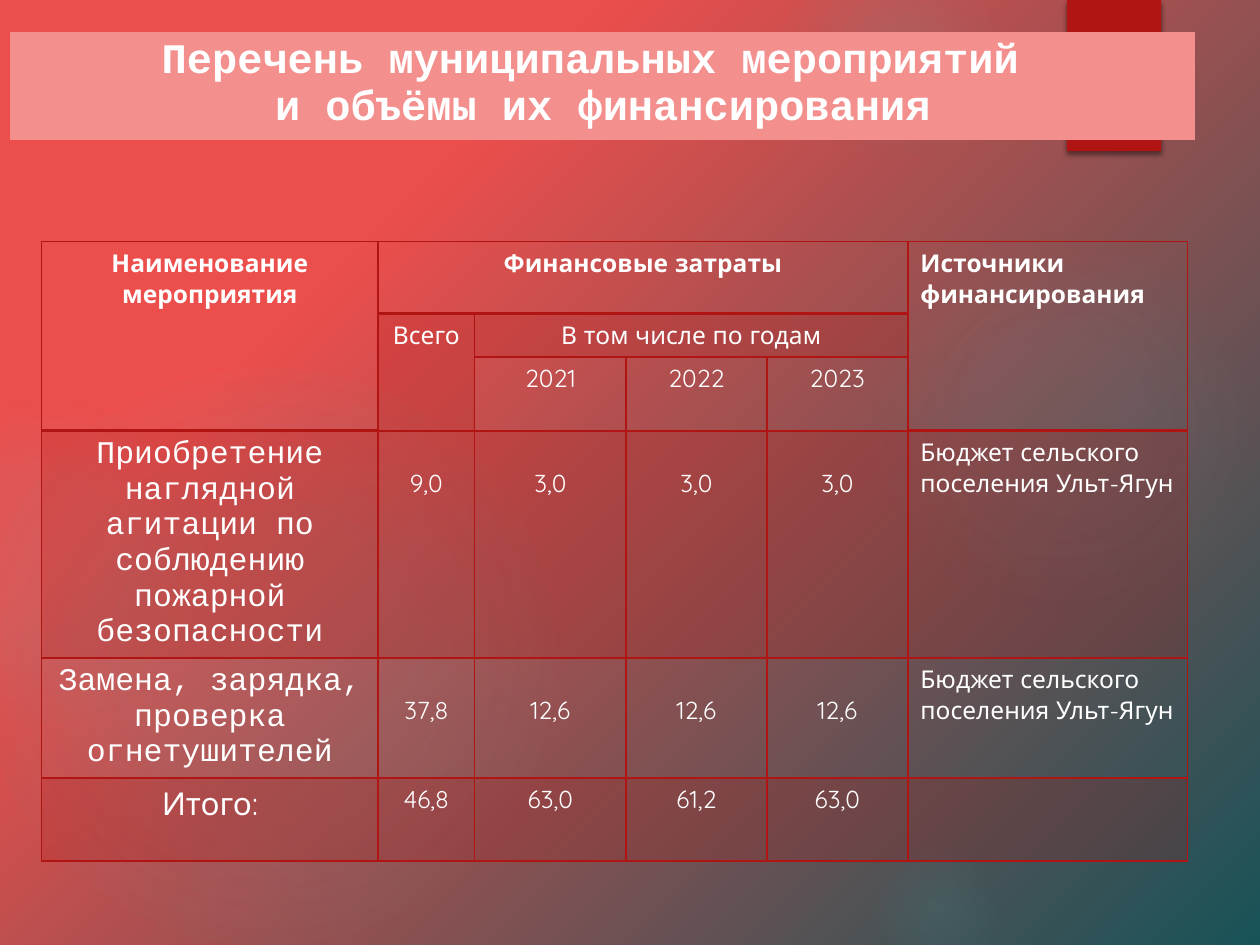
from lxml import etree
from pptx import Presentation
from pptx.dml.color import RGBColor
from pptx.enum.shapes import MSO_SHAPE
from pptx.enum.text import PP_ALIGN
from pptx.oxml import parse_xml
from pptx.oxml.ns import nsdecls, qn
from pptx.util import Cm, Pt

COLORS = {
    "bg_start": "EC4E4C",
    "bg_end": "185358",
    "glow": "50B9C1",
    "accent": "B01513",
    "title_band": "F38F8D",
    "text": "FFFFFF",
}
OVAL, RECTANGLE = MSO_SHAPE.OVAL, MSO_SHAPE.RECTANGLE
LEFT, CENTER = PP_ALIGN.LEFT, PP_ALIGN.CENTER
MONO, SANS = "Courier New", "Quicksand"

# Glows: left, top, diameter (cm), then (position, opacity) stops in percent
GLOWS = [
    (17.5, 4.65, 7.82, [(0, 7), (36, 6), (69, 0)]),
    (15.8, -1.27, 4.45, [(0, 14), (36, 7), (73, 0)]),
    (17.5, 16.94, 2.74, [(0, 9), (36, 5), (66, 0)]),
    (-0.43, 7.42, 11.63, [(0, 11), (36, 10), (75, 0)]),
    (-2.34, 8.05, 6.55, [(0, 8), (36, 8), (72, 0)]),
]

# Costs table
COLUMN_WIDTHS = [6.78, 1.95, 3.05, 2.84, 2.84, 5.64]
ROW_HEIGHTS = [1.45, 0.87, 1.49, 4.58, 2.42, 1.67]
SPANS = [((0, 0), (2, 0)), ((0, 1), (0, 4)), ((0, 5), (2, 5)),
         ((1, 1), (2, 1)), ((1, 2), (1, 4))]
HEADINGS = {
    (0, 0): "Наименование мероприятия",
    (0, 1): "Финансовые затраты",
    (0, 5): "Источники финансирования",
    (1, 1): "Всего",
    (1, 2): "В том числе по годам",
    (2, 2): "2021",
    (2, 3): "2022",
    (2, 4): "2023",
}
BUDGET = "Бюджет сельского поселения Ульт-Ягун"
MEASURES = [
    ("Приобретение наглядной агитации по соблюдению пожарной безопасности",
     "9,0", "3,0", "3,0", "3,0", BUDGET),
    ("Замена, зарядка, проверка огнетушителей",
     "37,8", "12,6", "12,6", "12,6", BUDGET),
    ("Итого:", "46,8", "63,0", "61,2", "63,0", ""),
]
FIRST_MEASURE, TOTAL_ROW, SOURCE_COLUMN = 3, 5, 5
TINTED = {(1, 1), (1, 2)} | {(row, col) for row in (3, 5) for col in range(6)}
# Heavy horizontal rules as (row below the rule, column)
HEAVY_RULES = {(1, col) for col in range(6)} | {(3, 0), (3, 5)}


def rgb(name):
    return RGBColor.from_string(COLORS[name])


def set_background(slide):
    fill = slide.background.fill
    fill.gradient()
    fill.gradient_angle = 315
    for stop, position, name in zip(fill.gradient_stops, (0.27, 1), ("bg_start", "bg_end")):
        stop.position = position
        stop.color.rgb = rgb(name)


def add_glow(slide, left, top, diameter, stops):
    glow = slide.shapes.add_shape(OVAL, Cm(left), Cm(top), Cm(diameter), Cm(diameter))
    glow.shadow.inherit = False
    glow.line.fill.background()
    glow.fill.background()
    stop_xml = "".join(
        f'<a:gs pos="{position * 1000}"><a:srgbClr val="{COLORS["glow"]}">'
        f'<a:alpha val="{opacity * 1000}"/></a:srgbClr></a:gs>'
        for position, opacity in stops)
    gradient = parse_xml(
        f'<a:gradFill {nsdecls("a")} rotWithShape="1"><a:gsLst>{stop_xml}</a:gsLst>'
        '<a:path path="circle"><a:fillToRect l="50000" t="50000" r="50000" b="50000"/>'
        '</a:path></a:gradFill>')
    properties = glow.element.spPr
    properties.replace(properties.find(qn("a:noFill")), gradient)


def add_ribbon(slide, left, top, width, height):
    ribbon = slide.shapes.add_shape(RECTANGLE, left, top, width, height)
    ribbon.fill.solid()
    ribbon.fill.fore_color.rgb = rgb("accent")
    ribbon.line.fill.background()
    ribbon.shadow.inherit = False
    effects = ribbon.element.spPr.find(qn("a:effectLst"))
    effects.append(parse_xml(
        f'<a:outerShdw {nsdecls("a")} blurRad="{Pt(3)}" dist="{Pt(2)}" dir="5400000">'
        '<a:srgbClr val="000000"><a:alpha val="45000"/></a:srgbClr></a:outerShdw>'))


def add_plain_table(slide, left, top, widths, heights):
    table = slide.shapes.add_table(
        len(heights), len(widths), left, top, Cm(sum(widths)), Cm(sum(heights))).table
    table.first_row = table.horz_banding = False
    for column, width in zip(table.columns, widths):
        column.width = Cm(width)
    for row, height in zip(table.rows, heights):
        row.height = Cm(height)
    return table


def set_borders(cell, color=None, top=1, bottom=1):
    properties = cell._tc.get_or_add_tcPr()
    paint = f'<a:solidFill><a:srgbClr val="{color}"/></a:solidFill>' if color else "<a:noFill/>"
    sides = (("lnL", 1), ("lnR", 1), ("lnT", top), ("lnB", bottom))
    for index, (side, width) in enumerate(sides):
        properties.insert(index, parse_xml(
            f'<a:{side} {nsdecls("a")} w="{Pt(width)}">{paint}</a:{side}>'))


def fill_cell(cell, name, opacity=None):
    cell.fill.solid()
    cell.fill.fore_color.rgb = rgb(name)
    if opacity is not None:
        color = cell._tc.tcPr.find(".//" + qn("a:srgbClr"))
        etree.SubElement(color, qn("a:alpha")).set("val", str(opacity * 1000))


def write(paragraph, text, size, font, bold=False, align=CENTER):
    paragraph.alignment = align
    run = paragraph.add_run()
    run.text = text
    run.font.size = Pt(size)
    run.font.name = font
    run.font.bold = bold
    run.font.color.rgb = rgb("text")


def add_title_band(slide, left, top, width, height):
    cell = add_plain_table(slide, left, top, [width], [height]).cell(0, 0)
    fill_cell(cell, "title_band")
    set_borders(cell)
    frame = cell.text_frame
    write(frame.paragraphs[0], "Перечень муниципальных мероприятий ", 24, MONO, True)
    write(frame.add_paragraph(), "и объёмы их финансирования", 24, MONO, True)


def add_costs_table(slide, left, top):
    table = add_plain_table(slide, left, top, COLUMN_WIDTHS, ROW_HEIGHTS)
    for first, last in SPANS:
        table.cell(*first).merge(table.cell(*last))

    # Fills and rules
    for row in range(len(ROW_HEIGHTS)):
        for col in range(len(COLUMN_WIDTHS)):
            cell = table.cell(row, col)
            if (row, col) in TINTED:
                fill_cell(cell, "accent", 20)
            else:
                cell.fill.background()
            set_borders(cell, COLORS["accent"],
                        top=2 if (row, col) in HEAVY_RULES else 1,
                        bottom=2 if (row + 1, col) in HEAVY_RULES else 1)

    # Headings
    for (row, col), heading in HEADINGS.items():
        write(table.cell(row, col).text_frame.paragraphs[0], heading, 14, SANS,
              row == 0, LEFT if col == SOURCE_COLUMN else CENTER)

    # Measures, their costs and the totals
    for row, measure in enumerate(MEASURES, FIRST_MEASURE):
        for col, content in enumerate(measure):
            cell = table.cell(row, col)
            if not content:
                continue
            is_name = col == 0
            if row != TOTAL_ROW and 0 < col < SOURCE_COLUMN:
                cell.margin_top = Cm(0.75)
            write(cell.text_frame.paragraphs[0], content, 18 if is_name else 14,
                  MONO if is_name and row != TOTAL_ROW else SANS,
                  align=LEFT if col == SOURCE_COLUMN else CENTER)


def main():
    prs = Presentation()
    prs.slide_width, prs.slide_height = Cm(25.4), Cm(19.05)
    slide = prs.slides.add_slide(prs.slide_layouts[6])
    set_background(slide)
    for glow in GLOWS:
        add_glow(slide, *glow)
    add_ribbon(slide, Cm(21.51), Cm(0), Cm(1.9), Cm(3.05))
    add_title_band(slide, Cm(0.21), Cm(0.64), 23.88, 2.16)
    add_costs_table(slide, Cm(0.84), Cm(4.87))
    prs.save("out.pptx")


if __name__ == "__main__":
    main()
